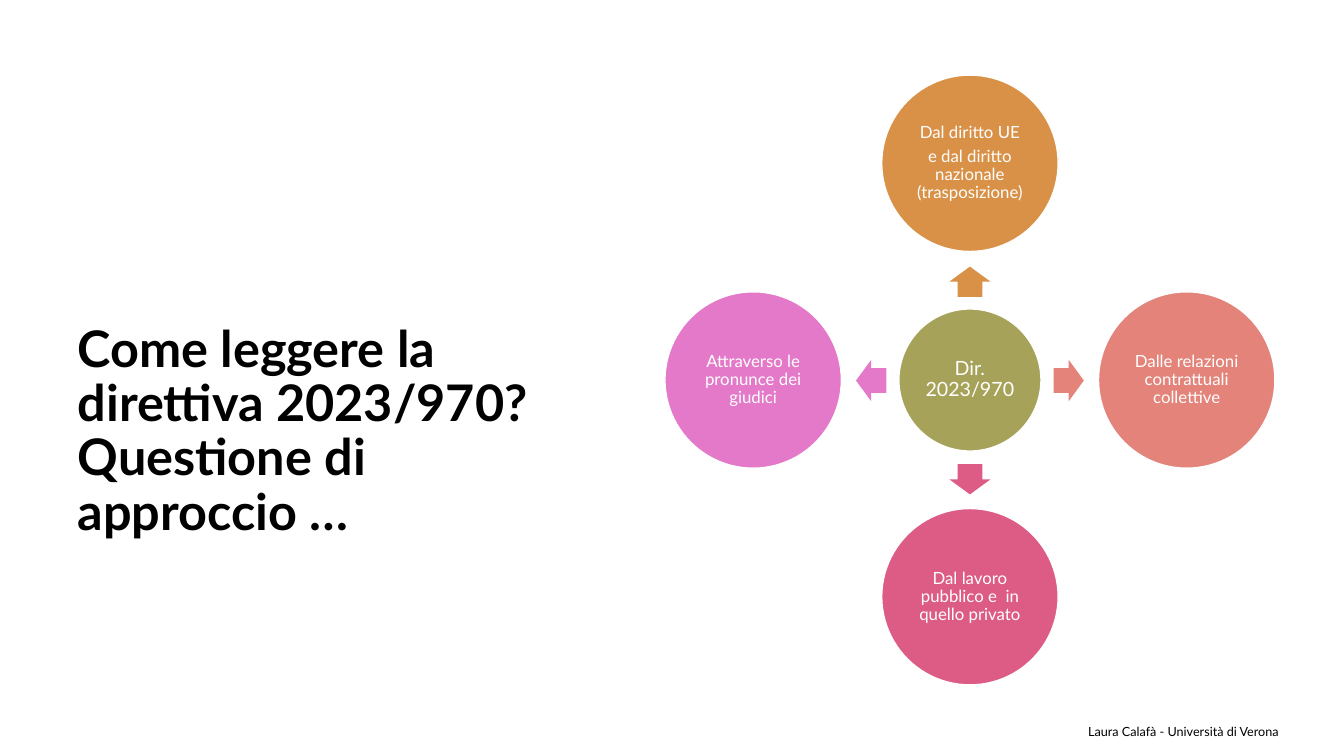
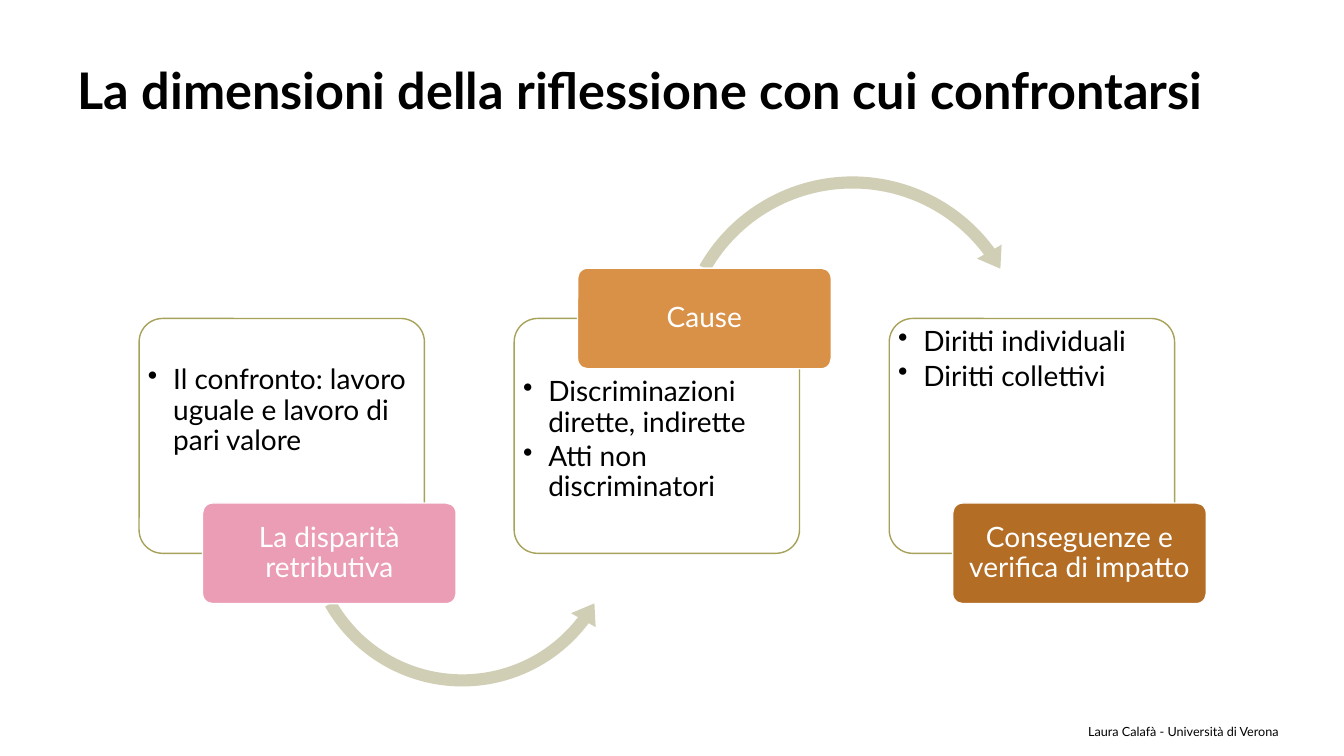
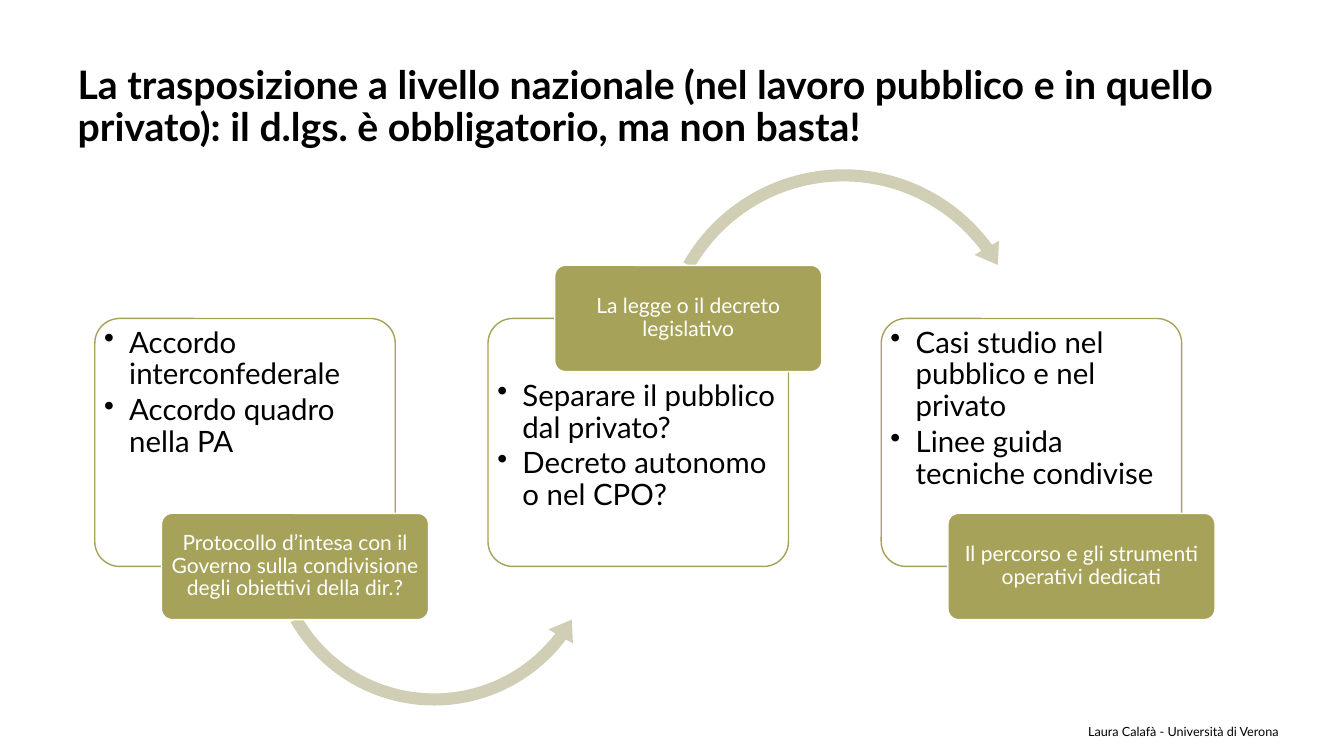
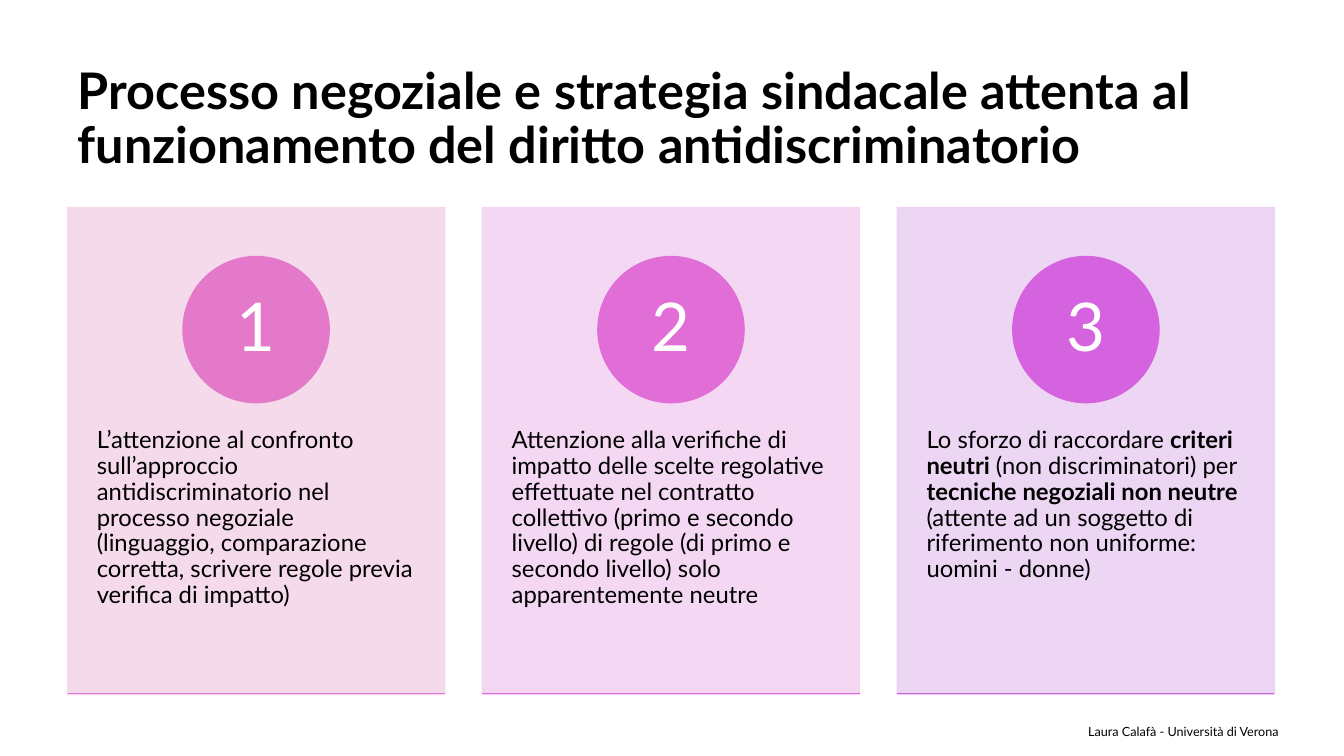
from lxml import etree
from pptx import Presentation
from pptx.dml.color import RGBColor
from pptx.enum.shapes import MSO_CONNECTOR, MSO_SHAPE as SHAPE
from pptx.enum.text import MSO_ANCHOR as ANCHOR, MSO_AUTO_SIZE, PP_ALIGN as ALIGN
from pptx.oxml.ns import qn
from pptx.util import Inches, Pt

FONT = "Lato"
FOOTER = "Laura Calafà - Università di Verona"
COLORS = {
    "white": "FFFFFF", "black": "000000", "olive": "A7A259", "sand": "D0CEB5",
    "orange": "D99147", "coral": "E38379", "rose": "DD5C85", "orchid": "E379C8",
    "pink": "EB9DB6", "brown": "B36D25",
    "panel1": "F4D7EB", "panel2": "F3D4F2", "panel3": "EBD2F2",
    "circle2": "E16DD6", "circle3": "D562DE",
    "rule1": "E273CF", "rule2": "DF68DE", "rule3": "C95CDD",
}

APPROACH_TITLE = "Come leggere la direttiva 2023/970?\vQuestione di approccio …"
HUB = "Dir. 2023/970"
SATELLITES = [
    (0, -1, 270, "orange", ["Dal diritto UE", "e dal diritto nazionale (trasposizione)"]),
    (1, 0, 0, "coral", ["Dalle relazioni contrattuali collettive"]),
    (0, 1, 90, "rose", ["Dal lavoro pubblico e  in quello privato"]),
    (-1, 0, 180, "orchid", ["Attraverso le pronunce dei giudici"]),
]

FLOWS = [
    {
        "title": "La dimensioni della riflessione con cui confrontarsi",
        "title_size": 36, "left": 1.38, "pitch": 3.72, "width": 2.83, "height": 2.33,
        "text_size": 20, "label_size": 20,
        "arrows": [(2.94, 3.6, 3.29), (6.63, 1.67, 3.65)],
        "steps": [
            ("La disparità retributiva", "pink", 0.38,
             ["Il confronto: lavoro uguale e lavoro di pari valore"]),
            ("Cause", "orange", 0,
             ["Discriminazioni dirette, indirette", "Atti non discriminatori"]),
            ("Conseguenze e verifica di impatto", "brown", 0,
             ["Diritti individuali", "Diritti collettivi"]),
        ],
    },
    {
        "title": "La trasposizione a livello nazionale (nel lavoro pubblico e in quello "
                 "privato): il d.lgs. è obbligatorio, ma non basta!",
        "title_size": 28, "left": 0.94, "pitch": 3.9, "width": 2.98, "height": 2.46,
        "text_size": 21, "label_size": 15,
        "arrows": [(2.59, 3.65, 3.43), (6.46, 1.6, 3.81)],
        "steps": [
            ("Protocollo d’intesa con il Governo sulla condivisione degli obiettivi della dir.?",
             "olive", 0, ["Accordo interconfederale", "Accordo quadro nella PA"]),
            ("La legge o il decreto legislativo", "olive", 0,
             ["Separare il pubblico dal privato?", "Decreto autonomo o nel CPO?"]),
            ("Il percorso e gli strumenti operativi dedicati", "olive", 0,
             ["Casi studio nel pubblico e nel privato", "Linee guida tecniche condivise"]),
        ],
    },
]

PROCESS_TITLE = ("Processo negoziale e strategia sindacale attenta al funzionamento "
                 "del diritto antidiscriminatorio")
CARDS = [
    ("panel1", "orchid", "rule1", [
        ("L’attenzione al confronto sull’approccio antidiscriminatorio nel processo negoziale "
         "(linguaggio, comparazione corretta, scrivere regole previa verifica di impatto)", False)]),
    ("panel2", "circle2", "rule2", [
        ("Attenzione alla verifiche di impatto delle scelte regolative effettuate nel contratto "
         "collettivo (primo e secondo livello) di regole (di primo e secondo livello) solo "
         "apparentemente neutre", False)]),
    ("panel3", "circle3", "rule3", [
        ("Lo sforzo di raccordare ", False), ("criteri neutri ", True),
        ("(non discriminatori) per ", False), ("tecniche negoziali non neutre ", True),
        ("(attente ad un soggetto di riferimento non uniforme: uomini - donne)", False)]),
]


def rgb(name):
    return RGBColor.from_string(COLORS[name])


def style_run(r, size, color, bold=False):
    r.font.name = FONT
    r.font.size = Pt(size)
    r.font.bold = bold
    r.font.color.rgb = rgb(color)


def set_frame(tf, margins, anchor):
    tf.word_wrap = True
    tf.auto_size = MSO_AUTO_SIZE.NONE
    tf.vertical_anchor = anchor
    tf.margin_left = tf.margin_right = Inches(margins[0])
    tf.margin_top = tf.margin_bottom = Inches(margins[1])


def write(tf, lines, size, color, align=ALIGN.CENTER, bold=False, after=0, spacing=0.9):
    tf.text = "\n".join(lines)
    for p in tf.paragraphs:
        p.alignment = align
        p.line_spacing = spacing
        p.space_after = Pt(after)
        for r in p.runs:
            style_run(r, size, color, bold)


def add_bullets(tf):
    for p in tf.paragraphs:
        pPr = p._p.get_or_add_pPr()
        pPr.set("marL", str(Inches(0.25)))
        pPr.set("indent", str(-Inches(0.25)))
        etree.SubElement(pPr, qn("a:buChar")).set("char", "•")


def add_shape(slide, kind, x, y, w, h, fill, line=None, adj=()):
    sp = slide.shapes.add_shape(kind, Inches(x), Inches(y), Inches(w), Inches(h))
    sp.shadow.inherit = False
    sp.fill.solid()
    sp.fill.fore_color.rgb = rgb(fill)
    if line:
        sp.line.color.rgb = rgb(line)
        sp.line.width = Pt(1)
    else:
        sp.line.fill.background()
    for i, value in enumerate(adj):
        sp.adjustments[i] = value
    return sp


def add_circle(slide, cx, cy, d, fill, line, lines, size):
    sp = add_shape(slide, SHAPE.OVAL, cx - d / 2, cy - d / 2, d, d, fill, line)
    set_frame(sp.text_frame, (0.02, 0.02), ANCHOR.MIDDLE)
    write(sp.text_frame, lines, size, "white", after=4)


def add_slide(prs, title, size=36, box=(0.67, 0.6, 11.65, 1.24)):
    slide = prs.slides.add_slide(prs.slide_layouts[5])
    sp = slide.shapes.title
    sp.left, sp.top, sp.width, sp.height = [Inches(v) for v in box]
    set_frame(sp.text_frame, (0.1, 0.05), ANCHOR.TOP)
    write(sp.text_frame, [title], size, "black", ALIGN.LEFT, bold=True)
    footer = slide.shapes.add_textbox(Inches(9.71), Inches(7.06), Inches(3.07), Inches(0.4))
    set_frame(footer.text_frame, (0.1, 0.05), ANCHOR.MIDDLE)
    write(footer.text_frame, [FOOTER], 9, "black", ALIGN.RIGHT, spacing=1.0)
    return slide


def build_approach(prs):
    slide = add_slide(prs, APPROACH_TITLE, box=(0.67, 3.16, 5.23, 2.55))
    cx, cy = 9.62, 3.77
    add_circle(slide, cx, cy, 1.41, "olive", "white", [HUB], 14)
    for dx, dy, angle, color, lines in SATELLITES:
        arrow = add_shape(slide, SHAPE.RIGHT_ARROW, cx + 0.98 * dx - 0.15, cy + 0.98 * dy - 0.2,
                          0.3, 0.41, color, adj=(0.6, 0.5))
        arrow.rotation = angle
        add_circle(slide, cx + 2.15 * dx, cy + 2.15 * dy, 1.75, color, "white", lines, 12)


def add_curve(slide, x, y, size, over):
    kind = SHAPE.CIRCULAR_ARROW if over else SHAPE.LEFT_CIRCULAR_ARROW
    start, end = (194.2, 125.76) if over else (22.25, 90.24)
    adj = (0.12 / size, 15 / size, start, end, 0.14 / size)
    add_shape(slide, kind, x, y, size, size, "sand", adj=adj)


def build_flow(prs, flow):
    slide = add_slide(prs, flow["title"], flow["title_size"])
    top, w, h = 3.16, flow["width"], flow["height"]
    label_w, label_h = w * 8 / 9, h * 3 / 7
    for i, (label, color, drop, bullets) in enumerate(flow["steps"]):
        x = flow["left"] + i * flow["pitch"]
        label_above = i % 2 == 1
        panel = add_shape(slide, SHAPE.ROUNDED_RECTANGLE, x, top, w, h, "white", "olive", (0.1,))
        tf = panel.text_frame
        set_frame(tf, (0.02, 0.02), ANCHOR.TOP)
        tf.margin_top = Inches(0.02 + drop + (label_h / 2 if label_above else 0))
        write(tf, bullets, flow["text_size"], "black", ALIGN.LEFT, after=3)
        add_bullets(tf)
        if i < len(flow["arrows"]):
            add_curve(slide, *flow["arrows"][i], label_above)
        edge = top if label_above else top + h
        tag = add_shape(slide, SHAPE.ROUNDED_RECTANGLE, x + w * 2 / 9, edge - label_h / 2,
                        label_w, label_h, color, "white", (0.1,))
        set_frame(tag.text_frame, (0.03, 0.03), ANCHOR.MIDDLE)
        write(tag.text_frame, [label], flow["label_size"], "white")


def set_alpha(fill_owner, percent):
    for color in fill_owner._element.spPr.iter(qn("a:srgbClr")):
        etree.SubElement(color, qn("a:alpha")).set("val", str(percent * 1000))


def build_process(prs):
    left, top, total, w, h = 0.67, 2.06, 11.97, 3.74, 4.83
    slide = add_slide(prs, PROCESS_TITLE, box=(left, 0.6, total, 1.24))
    pitch = (total - w) / (len(CARDS) - 1)
    for i, (fill, circle, rule, parts) in enumerate(CARDS):
        x = left + i * pitch
        panel = add_shape(slide, SHAPE.RECTANGLE, x, top, w, h, fill, fill)
        set_alpha(panel, 90)
        tf = panel.text_frame
        set_frame(tf, (0.29, 0.1), ANCHOR.TOP)
        tf.margin_top = Inches(2.19)
        p = tf.paragraphs[0]
        p.alignment = ALIGN.LEFT
        p.line_spacing = 0.9
        for text, bold in parts:
            r = p.add_run()
            r.text = text
            style_run(r, 17, "black", bold)
        add_circle(slide, x + w / 2, 3.27, 1.45, circle, circle, [str(i + 1)], 48)
        line = slide.shapes.add_connector(MSO_CONNECTOR.STRAIGHT, Inches(x), Inches(6.88),
                                          Inches(x + w), Inches(6.88))
        line.line.color.rgb = rgb(rule)
        line.line.width = Pt(1)
        etree.SubElement(line._element.spPr, qn("a:effectLst"))


def main():
    prs = Presentation()
    prs.slide_width, prs.slide_height = Inches(13.33), Inches(7.5)
    build_approach(prs)
    for flow in FLOWS:
        build_flow(prs, flow)
    build_process(prs)
    prs.save("out.pptx")


if __name__ == "__main__":
    main()
